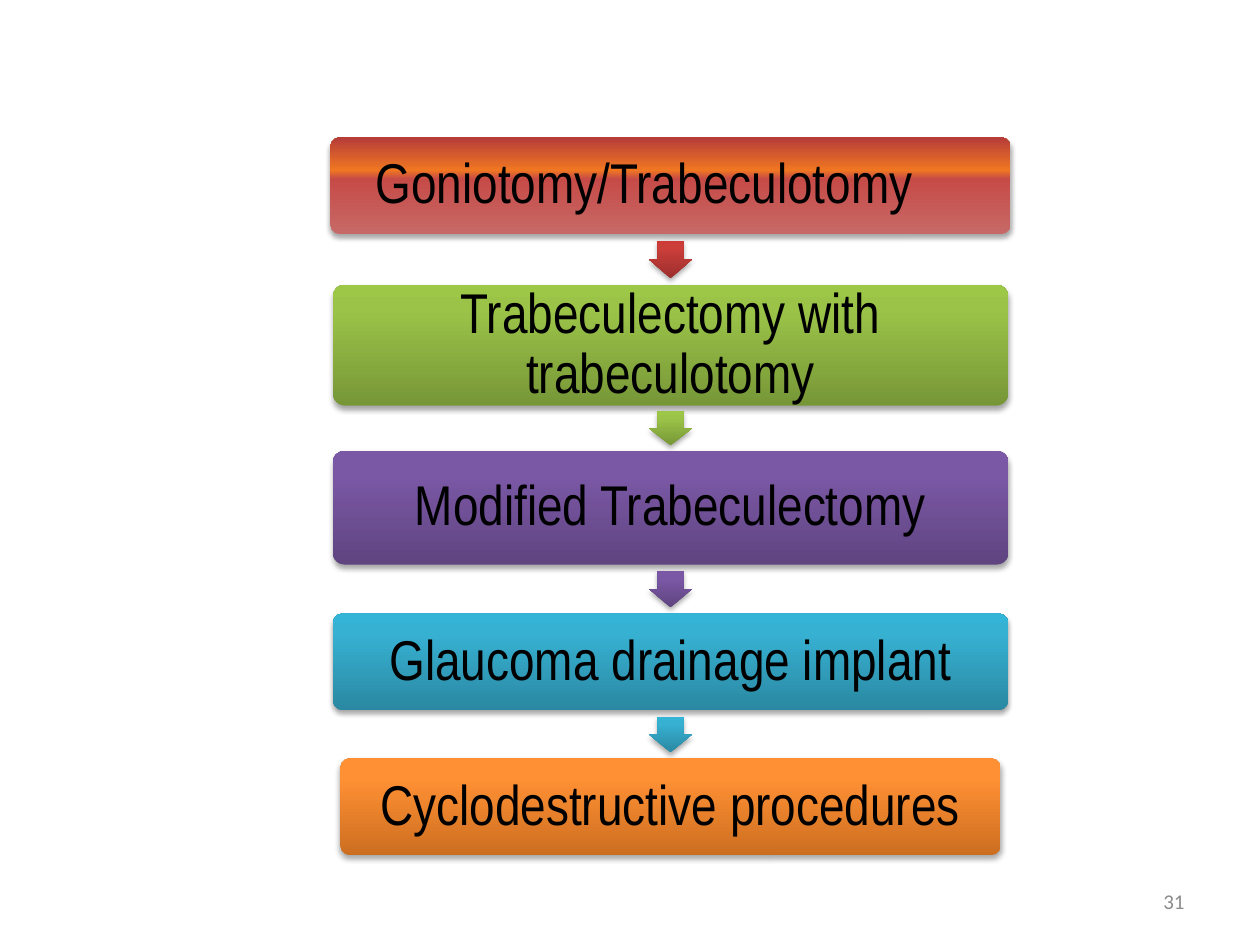
from dataclasses import dataclass

import pptx
import pptx.dml.color
import pptx.enum.shapes
import pptx.enum.text
import pptx.oxml.ns
import pptx.util
from lxml import etree

Pt = pptx.util.Pt
qn = pptx.oxml.ns.qn
MSO_SHAPE = pptx.enum.shapes.MSO_SHAPE
PP_ALIGN = pptx.enum.text.PP_ALIGN

COLORS = {
    "text": "000000", "page_number": "8C8C8C", "shadow": "000000",
    "rose": "C76967", "red": "C64B47", "flame": "F07622", "brick": "B63C39",
    "red_dark": "9C2F2D", "red_mid": "CB3E3A", "red_light": "CE3B37",
    "green_dark": "779737", "green_mid": "9BC348", "green_light": "9DC746",
    "purple_dark": "5F4480", "purple_mid": "7B58A6", "purple_light": "7C57A8",
    "blue_dark": "2A88A2", "blue_mid": "37B1D2", "blue_light": "34B4D6",
    "orange_dark": "CC6E20", "orange_mid": "FF9034", "orange_light": "FF9136",
}
CENTER_X = 383.2
ARROW_WIDTH = 24.5
ARROW_SHARE = 0.75  # part of the gap between two steps that the arrow fills
INSET = 9.4

Stops = list[tuple[int, str]]


@dataclass
class Step:
    text: str
    top: float
    width: float
    height: float
    hue: str
    extra_right_inset: float = 0


STEPS = [
    Step("Goniotomy/Trabeculotomy", 78.5, 388.8, 55.4, "red", 30),
    Step("Trabeculectomy with trabeculotomy", 162.7, 386, 69.1, "green"),
    Step("Modified Trabeculectomy", 257.8, 386, 64.8, "purple"),
    Step("Glaucoma drainage implant", 350.6, 386, 55.4, "blue"),
    Step("Cyclodestructive procedures", 433.4, 377.3, 55.4, "orange"),
]
FIRST_STEP_STOPS: Stops = [(0, "rose"), (57, "red"), (66, "flame"), (100, "brick")]


def hue_stops(hue: str) -> Stops:
    return [(0, f"{hue}_dark"), (80, f"{hue}_mid"), (100, f"{hue}_light")]


def add_color(parent, name: str):
    return etree.SubElement(parent, qn("a:srgbClr"), val=COLORS[name])


def style_shape(shape, stops: Stops) -> None:
    """Give the shape a bottom-to-top gradient, no outline and a soft shadow."""
    shape.fill.gradient()
    shape.fill.gradient_angle = 90
    shape.line.fill.background()
    shape.shadow.inherit = False
    properties = shape.element.spPr

    stop_list = properties.find(".//" + qn("a:gsLst"))
    for old_stop in list(stop_list):
        stop_list.remove(old_stop)
    for position, name in stops:
        stop = etree.SubElement(stop_list, qn("a:gs"), pos=str(position * 1000))
        add_color(stop, name)

    shadow = etree.SubElement(
        properties.find(qn("a:effectLst")), qn("a:outerShdw"),
        blurRad=str(Pt(3.1)), dist=str(Pt(1.8)), dir="5400000", rotWithShape="0")
    etree.SubElement(add_color(shadow, "shadow"), qn("a:alpha"), val="35000")


def add_centered_shape(page, kind, top: float, width: float, height: float, stops: Stops):
    shape = page.shapes.add_shape(
        kind, Pt(CENTER_X - width / 2), Pt(top), Pt(width), Pt(height))
    style_shape(shape, stops)
    return shape


def write_text(frame, text: str, font: str, size: float, color: str, alignment):
    frame.word_wrap = True
    frame.vertical_anchor = pptx.enum.text.MSO_ANCHOR.MIDDLE
    para = frame.paragraphs[0]
    para.alignment = alignment
    span = para.add_run()
    span.text = text
    span.font.name = font
    span.font.size = Pt(size)
    span.font.color.rgb = pptx.dml.color.RGBColor.from_string(COLORS[color])
    return para


def add_step(page, step: Step, stops: Stops) -> None:
    box = add_centered_shape(
        page, MSO_SHAPE.ROUNDED_RECTANGLE, step.top, step.width, step.height, stops)
    box.adjustments[0] = 0.1
    frame = box.text_frame
    frame.margin_left = frame.margin_top = frame.margin_bottom = Pt(INSET)
    frame.margin_right = Pt(INSET + step.extra_right_inset)
    para = write_text(frame, step.text, "Arial Narrow", 32, "text", PP_ALIGN.CENTER)
    para.line_spacing = 0.9


def add_arrow(page, upper: Step, lower: Step) -> None:
    """Centre an arrow in the gap between two steps."""
    upper_bottom = upper.top + upper.height
    gap = lower.top - upper_bottom
    length = gap * ARROW_SHARE
    arrow = add_centered_shape(
        page, MSO_SHAPE.DOWN_ARROW, upper_bottom + (gap - length) / 2,
        ARROW_WIDTH, length, hue_stops(upper.hue))
    arrow.adjustments[0] = 0.6
    arrow.adjustments[1] = 0.5


def main() -> None:
    deck = pptx.Presentation()
    deck.slide_width, deck.slide_height = Pt(720), Pt(540)
    page = deck.slides.add_slide(deck.slide_layouts[6])

    for index, step in enumerate(STEPS):
        add_step(page, step, hue_stops(step.hue) if index else FIRST_STEP_STOPS)
        if index + 1 < len(STEPS):
            add_arrow(page, step, STEPS[index + 1])

    number_box = page.shapes.add_textbox(Pt(516), Pt(500.5), Pt(168), Pt(28.8))
    write_text(number_box.text_frame, "31", "Calibri", 12, "page_number", PP_ALIGN.RIGHT)

    deck.save("out.pptx")


if __name__ == "__main__":
    main()
